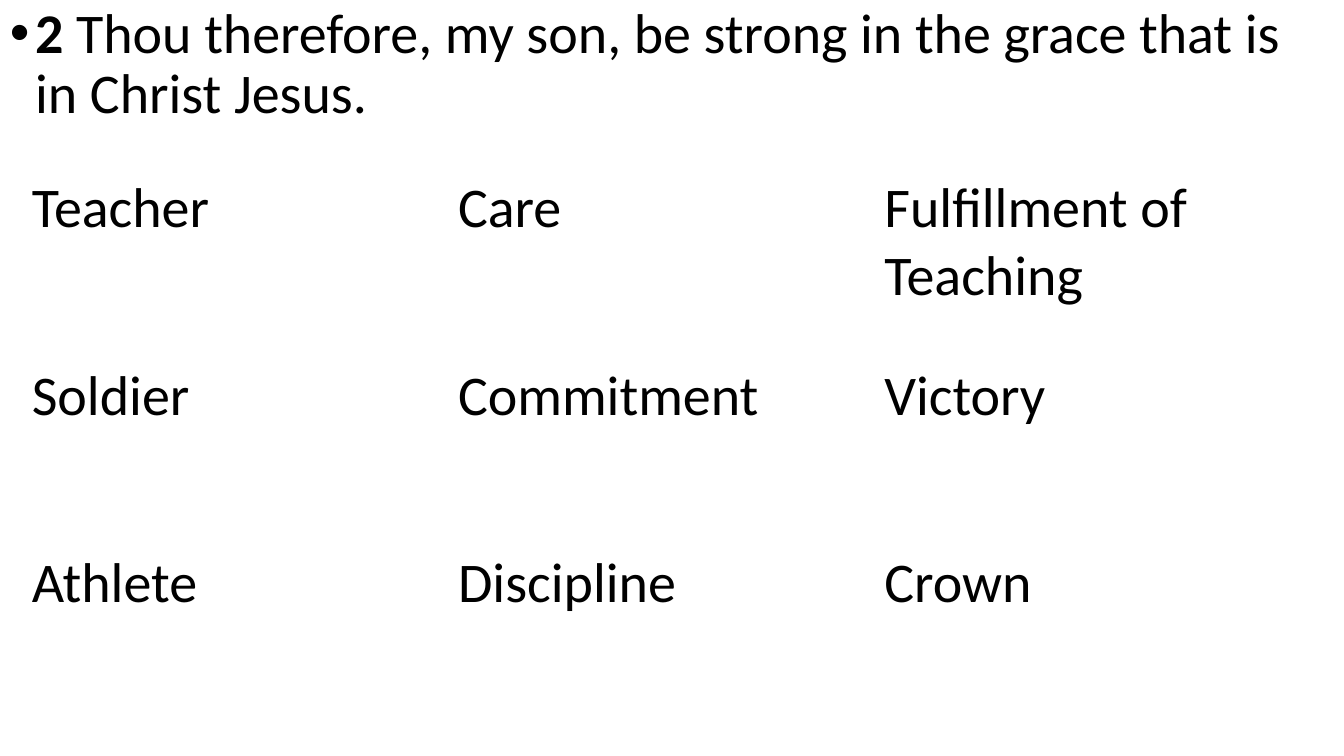
from lxml import etree
from pptx import Presentation
from pptx.dml.color import RGBColor
from pptx.oxml.ns import qn
from pptx.util import Pt

COLORS = {"text": "000000", "background": "FFFFFF"}
FONT = "Calibri"
TEXT_SIZE = 40
SLIDE_WIDTH, SLIDE_HEIGHT = 960, 540
BLANK_LAYOUT = 6

VERSE_NUMBER = "2\N{NO-BREAK SPACE}"
VERSE = "Thou therefore, my son, be strong in the grace that is in Christ Jesus."
ROLES = [
    ["Teacher", "Care", "Fulfillment of Teaching"],
    ["Soldier", "Commitment", "Victory"],
    ["Athlete", "Discipline", "Crown"],
]


def add_text(paragraph, text, size=TEXT_SIZE, color="text", bold=False):
    run = paragraph.add_run()
    run.text = text
    run.font.name = FONT
    run.font.size = Pt(size)
    run.font.bold = bold
    run.font.color.rgb = RGBColor.from_string(COLORS[color])


def add_bullet(paragraph, indent):
    properties = paragraph._p.get_or_add_pPr()
    properties.set("marL", str(Pt(indent)))
    properties.set("indent", str(-Pt(indent)))
    etree.SubElement(properties, qn("a:buFont")).set("typeface", "Arial")
    etree.SubElement(properties, qn("a:buChar")).set("char", "•")


def add_verse(slide, left, top, width, height):
    shape = slide.shapes.add_textbox(Pt(left), Pt(top), Pt(width), Pt(height))
    shape.text_frame.word_wrap = True
    paragraph = shape.text_frame.paragraphs[0]
    paragraph.line_spacing = 0.9
    paragraph.space_before = Pt(10)
    add_bullet(paragraph, indent=18)
    add_text(paragraph, VERSE_NUMBER, bold=True)
    add_text(paragraph, VERSE)


def add_roles_table(slide, left, top, width, height):
    table = slide.shapes.add_table(
        len(ROLES), len(ROLES[0]), Pt(left), Pt(top), Pt(width), Pt(height)
    ).table
    table.first_row = False
    table.horz_banding = False
    for row, texts in enumerate(ROLES):
        for column, text in enumerate(texts):
            cell = table.cell(row, column)
            cell.fill.background()
            add_text(cell.text_frame.paragraphs[0], text)


def main():
    presentation = Presentation()
    presentation.slide_width = Pt(SLIDE_WIDTH)
    presentation.slide_height = Pt(SLIDE_HEIGHT)
    slide = presentation.slides.add_slide(presentation.slide_layouts[BLANK_LAYOUT])
    background = slide.background.fill
    background.solid()
    background.fore_color.rgb = RGBColor.from_string(COLORS["background"])

    # Verse at the top
    add_verse(slide, 0, 0, SLIDE_WIDTH, SLIDE_HEIGHT)
    # Roles, their qualities and rewards
    add_roles_table(slide, 15.5, 121, 913.5, 402)

    presentation.save("out.pptx")


if __name__ == "__main__":
    main()
